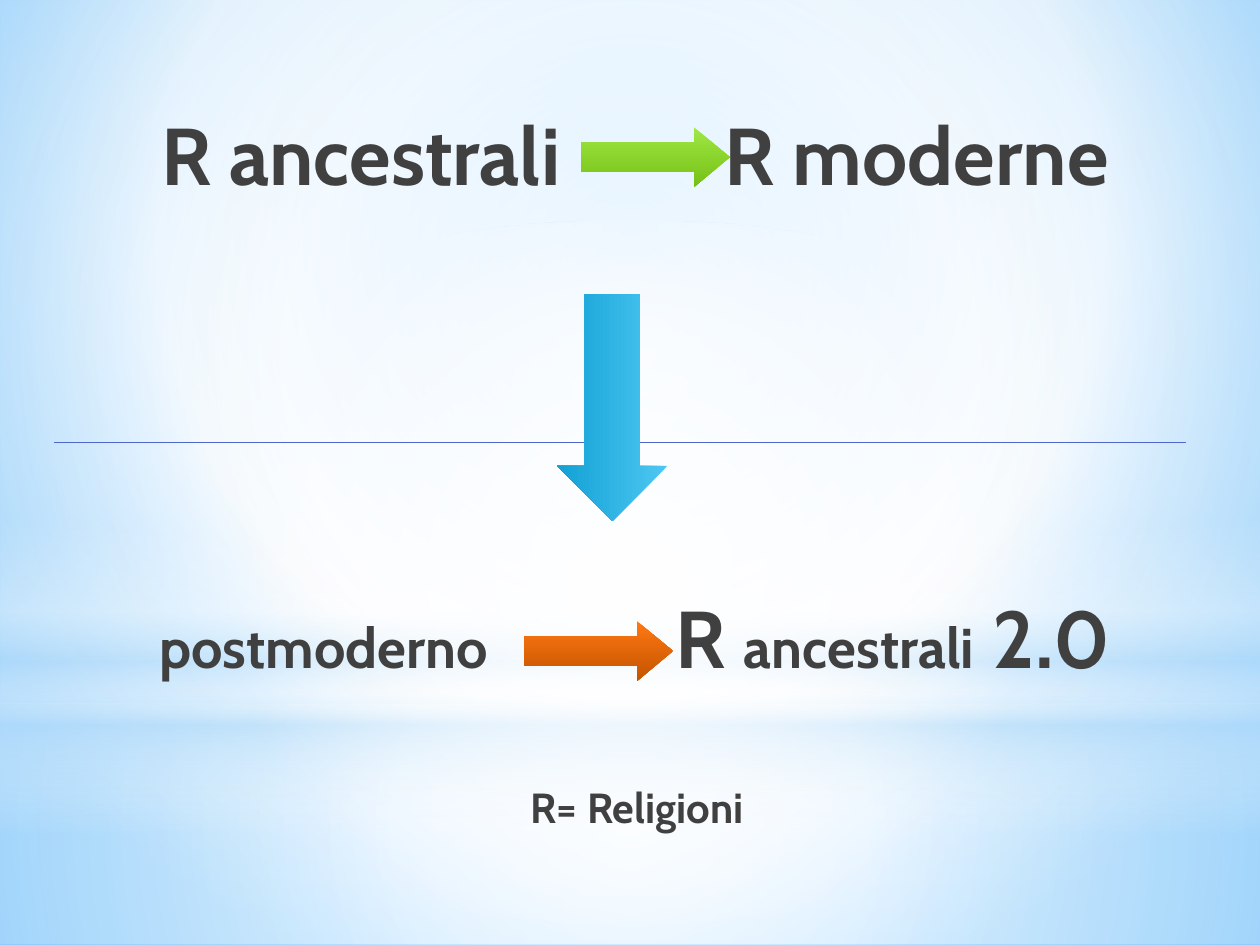
from lxml.etree import SubElement
from pptx import Presentation
from pptx.dml.color import RGBColor
from pptx.enum.shapes import MSO_CONNECTOR, MSO_SHAPE
from pptx.enum.text import PP_ALIGN
from pptx.oxml.ns import qn
from pptx.util import Pt

COLORS = {
    "text": "404040", "line": "4E67C8", "white": "FFFFFF", "haze": "B4DCFA",
    "sky": "9ED5FF", "deep_sky": "5BB9FF",
    "green_light": "A0E844", "green_dark": "75C016",
    "blue_light": "4EC7F2", "blue_dark": "11A1D4",
    "orange_light": "FF7813", "orange_dark": "C45400",
}
CENTER = (50, 50, 50, 50)
BIG, MEDIUM, SMALL = 46, 32, 24


def add_run(p, text, size, font="Cabin", color="text", bold=True):
    r = p.add_run()
    r.text = text
    r.font.name, r.font.size, r.font.bold = font, Pt(size), bold
    r.font.color.rgb = RGBColor.from_string(COLORS[color])


def set_gradient(fill, parent, stops, angle=90, focus=None):
    """Stops are (position %, colour, opacity %); focus makes the gradient circular."""
    fill.gradient()
    grad = next(parent.iter(qn("a:gradFill")))
    grad.clear()
    grad.set("rotWithShape", "1")
    stop_list = SubElement(grad, qn("a:gsLst"))
    for pos, color, alpha in stops:
        stop = SubElement(stop_list, qn("a:gs"), pos=str(pos * 1000))
        clr = SubElement(stop, qn("a:srgbClr"), val=COLORS[color])
        if alpha < 100:
            SubElement(clr, qn("a:alpha"), val=str(alpha * 1000))
    if focus:
        circle = SubElement(grad, qn("a:path"), path="circle")
        sides = {side: str(v * 1000) for side, v in zip("ltrb", focus)}
        SubElement(circle, qn("a:fillToRect"), **sides)
    else:
        SubElement(grad, qn("a:lin"), ang=str(angle * 60000), scaled="0")


class SlideBuilder:
    def __init__(self, prs):
        self.s = prs.slides.add_slide(prs.slide_layouts[6])

    def background(self, stops, focus):
        set_gradient(self.s.background.fill, self.s.element, stops, focus=focus)

    def shape(self, kind, box, stops, focus=None):
        sp = self.s.shapes.add_shape(kind, *map(Pt, box))
        sp.shadow.inherit = False
        sp.line.fill.background()
        set_gradient(sp.fill, sp.element, stops, focus=focus)
        return sp

    def arrow(self, box, hue, head=0.5, rotation=0):
        stops = [(0, f"{hue}_light", 100), (100, f"{hue}_dark", 100)]
        sp = self.shape(MSO_SHAPE.RIGHT_ARROW, box, stops)
        sp.adjustments[1] = head
        sp.rotation = rotation

    def line(self, x1, y1, x2, y2):
        cxn = self.s.shapes.add_connector(
            MSO_CONNECTOR.STRAIGHT, *map(Pt, (x1, y1, x2, y2)))
        cxn.line.color.rgb = RGBColor.from_string(COLORS["line"])
        cxn.line.width = Pt(0.75)
        SubElement(cxn.element.spPr, qn("a:effectLst"))

    def text(self, box, runs, align=PP_ALIGN.LEFT):
        tf = self.s.shapes.add_textbox(*map(Pt, box)).text_frame
        tf.word_wrap = True
        tf.margin_left = tf.margin_right = tf.margin_top = tf.margin_bottom = 0
        p = tf.paragraphs[0]
        p.alignment = align
        for text, size in runs:
            add_run(p, text, size)


def main():
    prs = Presentation()
    prs.slide_width, prs.slide_height = Pt(720), Pt(540)
    b = SlideBuilder(prs)

    b.background([(0, "sky", 100), (60, "white", 100), (100, "deep_sky", 100)],
                 focus=(20, 10, 20, 60))
    b.shape(MSO_SHAPE.RECTANGLE, (0, 402, 720, 138),
            [(0, "white", 91), (37, "white", 76), (100, "haze", 79)], CENTER)
    b.shape(MSO_SHAPE.RECTANGLE, (0, 0, 720, 402),
            [(0, "white", 89), (48, "white", 62), (100, "haze", 79)], CENTER)
    b.shape(MSO_SHAPE.RECTANGLE, (0, 297, 720, 180),
            [(0, "white", 0), (29, "white", 30), (45, "haze", 40),
             (55, "white", 26), (65, "haze", 60), (100, "white", 0)])
    b.shape(MSO_SHAPE.OVAL, (0, 126, 720, 402),
            [(0, "white", 100), (56, "white", 0)], CENTER)

    b.text((92, 60, 240, 56), [("R ancestrali", BIG)])
    b.text((414, 60, 240, 56), [("R moderne", BIG)])
    b.text((91, 350, 205, 39), [("postmoderno", MEDIUM)])
    b.text((386, 336, 270, 56),
           [("R ", BIG), ("ancestrali", MEDIUM), (" 2.0", BIG)])
    b.text((264, 446.5, 200, 30), [("R= Religioni", SMALL)], PP_ALIGN.CENTER)

    b.arrow((332, 72.8, 85, 34), "green", head=0.6)
    b.line(31, 252.7, 677.5, 252.7)
    b.arrow((285, 201.4, 129.6, 63.2), "blue", rotation=90)
    b.arrow((299.5, 355, 85, 34), "orange", head=0.6)

    prs.save("out.pptx")


if __name__ == "__main__":
    main()
